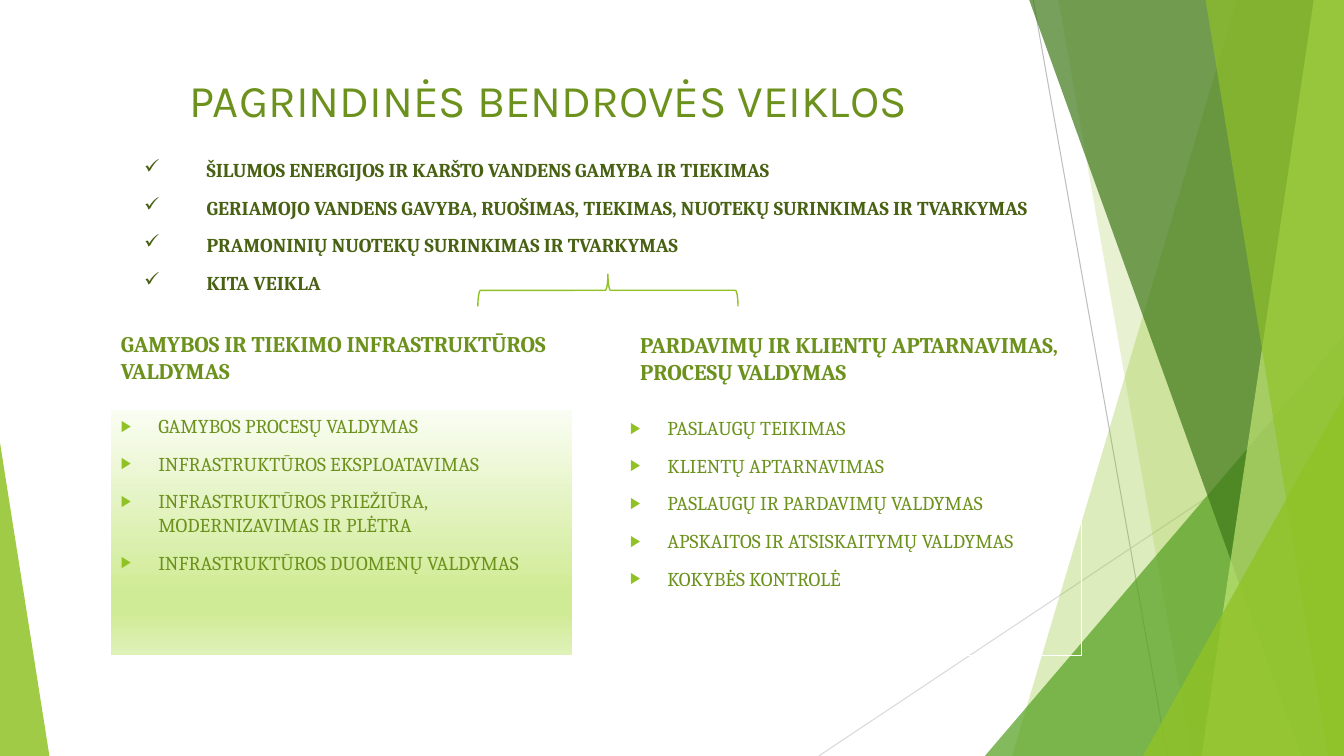
from dataclasses import dataclass

from lxml import etree
from pptx import Presentation
from pptx.dml.color import RGBColor
from pptx.enum.shapes import MSO_CONNECTOR, MSO_SHAPE
from pptx.enum.text import MSO_ANCHOR, MSO_AUTO_SIZE, PP_ALIGN
from pptx.oxml.ns import qn
from pptx.util import Inches, Pt

TRIANGLE = MSO_SHAPE.ISOSCELES_TRIANGLE
BRACE = MSO_SHAPE.LEFT_BRACE
STRAIGHT = MSO_CONNECTOR.STRAIGHT
TOP, MIDDLE, BOTTOM = MSO_ANCHOR.TOP, MSO_ANCHOR.MIDDLE, MSO_ANCHOR.BOTTOM
LEFT, CENTER = PP_ALIGN.LEFT, PP_ALIGN.CENTER
NO_AUTOFIT = MSO_AUTO_SIZE.NONE
COMPARISON_LAYOUT = 4


@dataclass(frozen=True)
class Theme:
    title_font: str = "Karla"
    body_font: str = "Cambria"
    title_size: float = 32.4
    heading_size: float = 16
    list_size: float = 14
    text: str = "6C921D"
    dark_text: str = "486113"
    accent: str = "90C226"
    green: str = "54A021"
    forest: str = "3F7819"
    lime: str = "C0E474"
    white: str = "FFFFFF"
    gray: str = "BFBFBF"
    light_gray: str = "D9D9D9"
    panel: tuple = ((0, "FAFDF3"), (74, "D0EB96"), (83, "D0EB96"), (100, "DFF1B9"))


def add_child(parent, tag, **attributes):
    return etree.SubElement(parent, qn(tag), attributes)


class SlideBuilder:
    def __init__(self, presentation, theme):
        self.theme = theme
        self.width = presentation.slide_width
        self.height = presentation.slide_height
        layout = presentation.slide_layouts[COMPARISON_LAYOUT]
        self.slide = presentation.slides.add_slide(layout)
        self.shapes = self.slide.shapes

    def x(self, percent):
        return round(self.width * percent / 100)

    def y(self, percent):
        return round(self.height * percent / 100)

    def box(self, left, top, width, height):
        return self.x(left), self.y(top), self.x(width), self.y(height)

    def line(self, start, end, color):
        connector = self.shapes.add_connector(
            STRAIGHT, self.x(start[0]), self.y(start[1]), self.x(end[0]), self.y(end[1]))
        connector.line.color.rgb = RGBColor.from_string(color)
        connector.line.width = Pt(0.75)
        add_child(connector.element.spPr, "a:effectLst")

    def paint(self, shape, color, opacity):
        shape.shadow.inherit = False
        shape.line.fill.background()
        shape.fill.solid()
        shape.fill.fore_color.rgb = RGBColor.from_string(color)
        color_element = shape.element.spPr.find(qn("a:solidFill"))[0]
        add_child(color_element, "a:alpha", val=str(opacity * 1000))

    def ribbon(self, top_x, bottom_x, color, opacity):
        builder = self.shapes.build_freeform(self.x(top_x), 0)
        builder.add_line_segments([
            (self.width, 0), (self.width, self.height), (self.x(bottom_x), self.height)])
        self.paint(builder.convert_to_shape(), color, opacity)

    def corner(self, left, top, width, apex, color, opacity):
        shape = self.shapes.add_shape(TRIANGLE, *self.box(left, top, width, 100 - top))
        shape.adjustments[0] = apex
        self.paint(shape, color, opacity)

    def brace(self, left, top, width, height):
        shape = self.shapes.add_shape(BRACE, *self.box(left, top, width, height))
        shape.rotation = 90
        shape.shadow.inherit = False
        shape.fill.background()
        shape.line.color.rgb = RGBColor.from_string(self.theme.accent)
        shape.line.width = Pt(1)

    def fill_text(self, shape, lines, font, size, color, bold=False, align=LEFT,
                  anchor=TOP, before=0, after=0):
        frame = shape.text_frame
        frame.word_wrap = True
        frame.auto_size = NO_AUTOFIT
        frame.vertical_anchor = anchor
        for number, text in enumerate(lines):
            paragraph = frame.add_paragraph() if number else frame.paragraphs[0]
            paragraph.alignment = align
            paragraph.space_before = Pt(before)
            paragraph.space_after = Pt(after)
            run = paragraph.add_run()
            run.text = text
            run.font.name = font
            run.font.size = Pt(size)
            run.font.bold = bold
            run.font.color.rgb = RGBColor.from_string(color)

    def bullets(self, shape, character, indent, color, size):
        for paragraph in shape.text_frame.paragraphs:
            properties = paragraph._p.get_or_add_pPr()
            properties.set("marL", str(Inches(indent)))
            properties.set("indent", str(-Inches(indent)))
            add_child(add_child(properties, "a:buClr"), "a:srgbClr", val=color)
            add_child(properties, "a:buSzPct", val=str(size * 1000))
            add_child(properties, "a:buChar", char=character)

    def placeholder(self, index, bounds):
        shape = self.slide.placeholders[index]
        shape.left, shape.top, shape.width, shape.height = self.box(*bounds)
        shape.element.getparent().append(shape.element)
        return shape

    def title(self, text, bounds):
        theme = self.theme
        self.fill_text(self.placeholder(0, bounds), [text], theme.title_font,
                       theme.title_size, theme.text, align=CENTER, anchor=MIDDLE)

    def heading(self, index, text, bounds):
        theme = self.theme
        self.fill_text(self.placeholder(index, bounds), [text], theme.body_font,
                       theme.heading_size, theme.text, bold=True, anchor=BOTTOM, before=10)

    def activity_list(self, index, items, bounds, stops=()):
        theme = self.theme
        shape = self.placeholder(index, bounds)
        if stops:
            shape.fill.gradient()
            shape.fill.gradient_angle = 270
            stop_list = shape.element.spPr.find(qn("a:gradFill")).find(qn("a:gsLst"))
            for stop in list(stop_list):
                stop_list.remove(stop)
            for position, color in stops:
                stop = add_child(stop_list, "a:gs", pos=str(position * 1000))
                add_child(stop, "a:srgbClr", val=color)
        shape.line.color.rgb = RGBColor.from_string(theme.white)
        shape.line.width = Pt(0.75)
        self.fill_text(shape, items, theme.body_font, theme.list_size, theme.text, before=10)
        self.bullets(shape, "▶", 0.37, theme.accent, 80)

    def checklist(self, items, bounds):
        theme = self.theme
        shape = self.shapes.add_textbox(*self.box(*bounds))
        self.fill_text(shape, items, theme.body_font, theme.list_size, theme.dark_text,
                       bold=True, after=10)
        self.bullets(shape, "✓", 0.62, theme.dark_text, 100)


def main():
    presentation = Presentation()
    presentation.slide_width = Inches(13.33)
    presentation.slide_height = Inches(7.5)
    theme = Theme()
    builder = SlideBuilder(presentation, theme)

    builder.line((76.88, 0), (86.85, 100), theme.gray)
    builder.line((100, 53.73), (60.92, 100), theme.light_gray)
    builder.ribbon(92.03, 75.3, theme.accent, 30)
    builder.ribbon(78.75, 88.65, theme.accent, 20)
    builder.corner(73.28, 44.4, 26.72, 1, theme.green, 72)
    builder.ribbon(76.58, 96.82, theme.forest, 70)
    builder.ribbon(97.75, 89.4, theme.lime, 70)
    builder.ribbon(89.7, 98.8, theme.accent, 65)
    builder.corner(85.05, 52.4, 14.95, 1, theme.accent, 80)
    builder.corner(0, 58.53, 3.68, 0, theme.accent, 85)

    builder.title("PAGRINDINĖS BENDROVĖS VEIKLOS", (5.55, 8.93, 70.5, 8.4))
    builder.heading(1, "GAMYBOS IR TIEKIMO INFRASTRUKTŪROS VALDYMAS",
                    (8.25, 43.07, 34.35, 8.4))
    builder.activity_list(2, [
        "GAMYBOS PROCESŲ VALDYMAS",
        "INFRASTRUKTŪROS EKSPLOATAVIMAS",
        "INFRASTRUKTŪROS PRIEŽIŪRA, MODERNIZAVIMAS IR PLĖTRA",
        "INFRASTRUKTŪROS DUOMENŲ VALDYMAS",
    ], (8.25, 54.13, 34.35, 32.53), theme.panel)
    builder.heading(3, "PARDAVIMŲ IR KLIENTŲ APTARNAVIMAS, PROCESŲ VALDYMAS",
                    (46.88, 43.2, 34.35, 8.4))
    builder.activity_list(4, [
        "PASLAUGŲ TEIKIMAS",
        "KLIENTŲ APTARNAVIMAS",
        "PASLAUGŲ IR PARDAVIMŲ VALDYMAS",
        "APSKAITOS IR ATSISKAITYMŲ VALDYMAS",
        "KOKYBĖS KONTROLĖ",
    ], (46.13, 54.4, 34.35, 32.27))
    builder.checklist([
        "ŠILUMOS ENERGIJOS IR KARŠTO VANDENS GAMYBA IR TIEKIMAS",
        "GERIAMOJO VANDENS GAVYBA, RUOŠIMAS, TIEKIMAS, NUOTEKŲ SURINKIMAS IR TVARKYMAS",
        "PRAMONINIŲ NUOTEKŲ SURINKIMAS IR TVARKYMAS",
        "KITA VEIKLA",
    ], (9.98, 20.27, 70.5, 20.67))
    builder.brace(44.03, 21.2, 2.4, 34.4)

    presentation.save("out.pptx")


if __name__ == "__main__":
    main()
